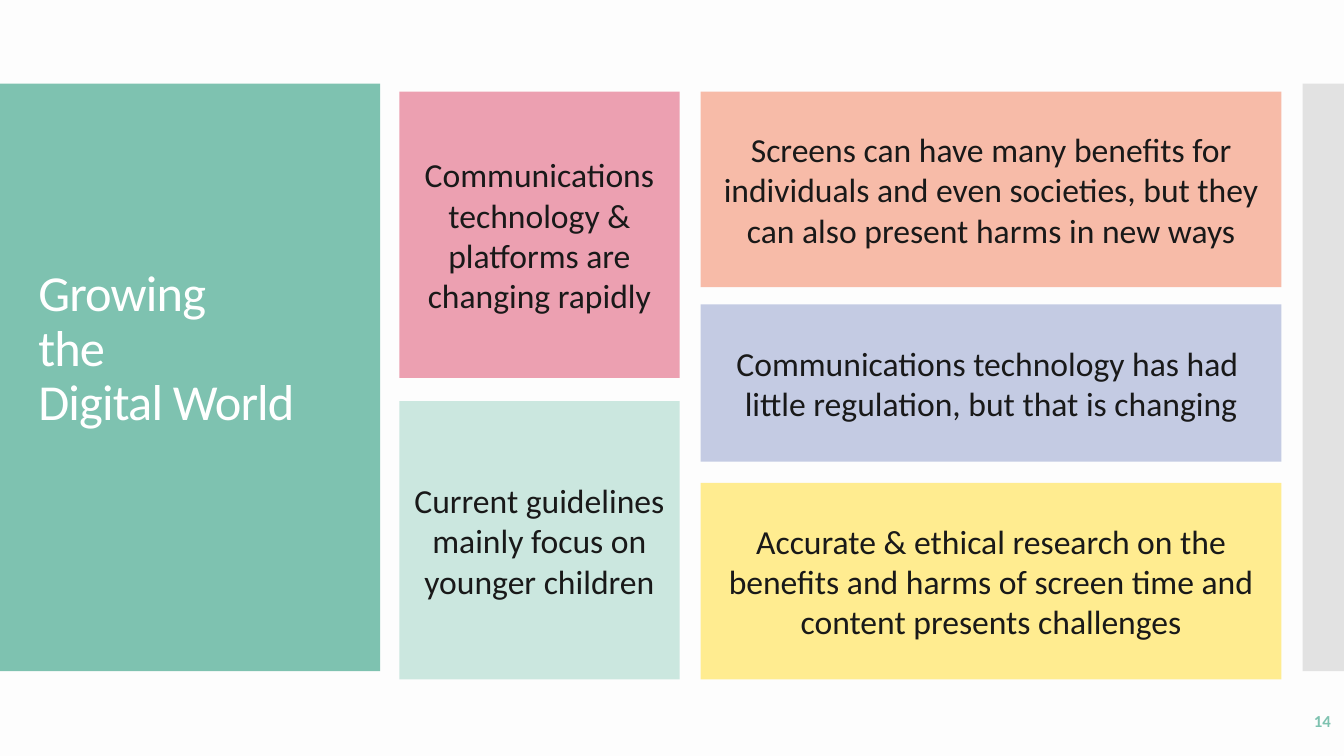
from dataclasses import dataclass

from lxml.etree import SubElement
from pptx import Presentation
from pptx.dml.color import RGBColor
from pptx.enum.shapes import MSO_SHAPE
from pptx.enum.text import MSO_ANCHOR, MSO_AUTO_SIZE, PP_ALIGN
from pptx.oxml.ns import qn
from pptx.util import Inches, Pt


@dataclass(frozen=True)
class Theme:
    """Colours, font and type sizes of the deck."""
    font: str = "Calibri"
    background: str = "FDFDFD"
    accent: str = "7EC2B0"
    edge: str = "C8C8C8"
    white: str = "FFFFFF"
    ink: str = "191919"
    pink: str = "ECA0B1"
    mint: str = "CBE7DF"
    peach: str = "F7BBA8"
    lavender: str = "C4CBE3"
    yellow: str = "FFEC90"
    title_size: int = 36
    body_size: int = 24
    number_size: int = 12


THEME = Theme()

NARROW_CARDS = [
    (0, 2.84, THEME.pink,
     "Communications technology & platforms are changing rapidly"),
    (3.07, 2.76, THEME.mint,
     "Current guidelines mainly focus on younger children"),
]
WIDE_CARDS = [
    (0, 1.94, THEME.peach,
     "Screens can have many benefits for individuals and even societies, "
     "but they can also present harms in new ways"),
    (2.11, 1.56, THEME.lavender,
     "Communications technology has had \v"
     "little regulation, but that is changing"),
    (3.88, 1.95, THEME.yellow,
     "Accurate & ethical research on the benefits and harms of screen time "
     "and content presents challenges"),
]


def write_text(sp, text, size, color, align, bold=False):
    """Fill a shape with one vertically centred, formatted paragraph."""
    tf = sp.text_frame
    tf.text = text
    tf.word_wrap = True
    tf.auto_size = MSO_AUTO_SIZE.NONE
    tf.vertical_anchor = MSO_ANCHOR.MIDDLE
    p = tf.paragraphs[0]
    p.alignment = align
    for r in p.runs:
        r.font.name = THEME.font
        r.font.size = Pt(size)
        r.font.bold = bold
        r.font.color.rgb = RGBColor.from_string(color)
    return p


def add_panel(s, left, top, width, height, color):
    """Add a flat rectangle without outline or shadow."""
    sp = s.shapes.add_shape(MSO_SHAPE.RECTANGLE, Inches(left), Inches(top),
                            Inches(width), Inches(height))
    sp.fill.solid()
    sp.fill.fore_color.rgb = RGBColor.from_string(color)
    sp.line.fill.background()
    sp.shadow.inherit = False
    return sp


def add_title_panel(s, left, top, width, height):
    """Place the title on its coloured panel."""
    add_panel(s, left, top, width, height, THEME.accent)
    title = s.shapes.title
    s.shapes.element.append(title.element)
    title.left, title.top = Inches(left + 0.28), Inches(top + 0.4)
    title.width, title.height = Inches(width - 0.55), Inches(height - 0.8)
    p = write_text(title, "Growing\vthe\vDigital World", THEME.title_size,
                   THEME.white, PP_ALIGN.LEFT)
    title.text_frame.margin_bottom = Inches(0.6)
    p.line_spacing = 0.9
    for r in p.runs:
        r.font.element.set("spc", "-60") if hasattr(r.font, "element") else \
            r._r.get_or_add_rPr().set("spc", "-60")


def add_edge_panel(s, left, top, width, height):
    """Add the half-transparent strip at the slide edge."""
    sp = add_panel(s, left, top, width, height, THEME.edge)
    color = sp.element.spPr.find(qn("a:solidFill")).find(qn("a:srgbClr"))
    SubElement(color, qn("a:alpha")).set("val", "50000")


def add_card_column(s, left, top, width, cards):
    """Stack text cards in a column, each at its offset from the top."""
    for offset, height, color, text in cards:
        sp = add_panel(s, left, top + offset, width, height, color)
        write_text(sp, text, THEME.body_size, THEME.ink, PP_ALIGN.CENTER)


def add_slide_number(s, left, top, width, height, number):
    """Add the slide number, right-aligned in its box."""
    sp = s.shapes.add_textbox(Inches(left), Inches(top), Inches(width),
                              Inches(height))
    write_text(sp, str(number), THEME.number_size, THEME.accent,
               PP_ALIGN.RIGHT, bold=True)


def build_card_slide(prs):
    """Build the slide with a title panel and two columns of cards."""
    s = prs.slides.add_slide(prs.slide_layouts[5])
    s.background.fill.solid()
    s.background.fill.fore_color.rgb = RGBColor.from_string(THEME.background)
    add_title_panel(s, 0, 0.83, 3.77, 5.83)
    add_edge_panel(s, 12.92, 0.83, 0.41, 5.83)
    add_card_column(s, 3.96, 0.91, 2.78, NARROW_CARDS)
    add_card_column(s, 6.95, 0.91, 5.76, WIDE_CARDS)
    add_slide_number(s, 11.63, 6.95, 1.67, 0.4, 14)


def main():
    """Create the presentation and save it."""
    prs = Presentation()
    prs.slide_width, prs.slide_height = Inches(13.33), Inches(7.5)
    build_card_slide(prs)
    prs.save("out.pptx")


if __name__ == "__main__":
    main()
